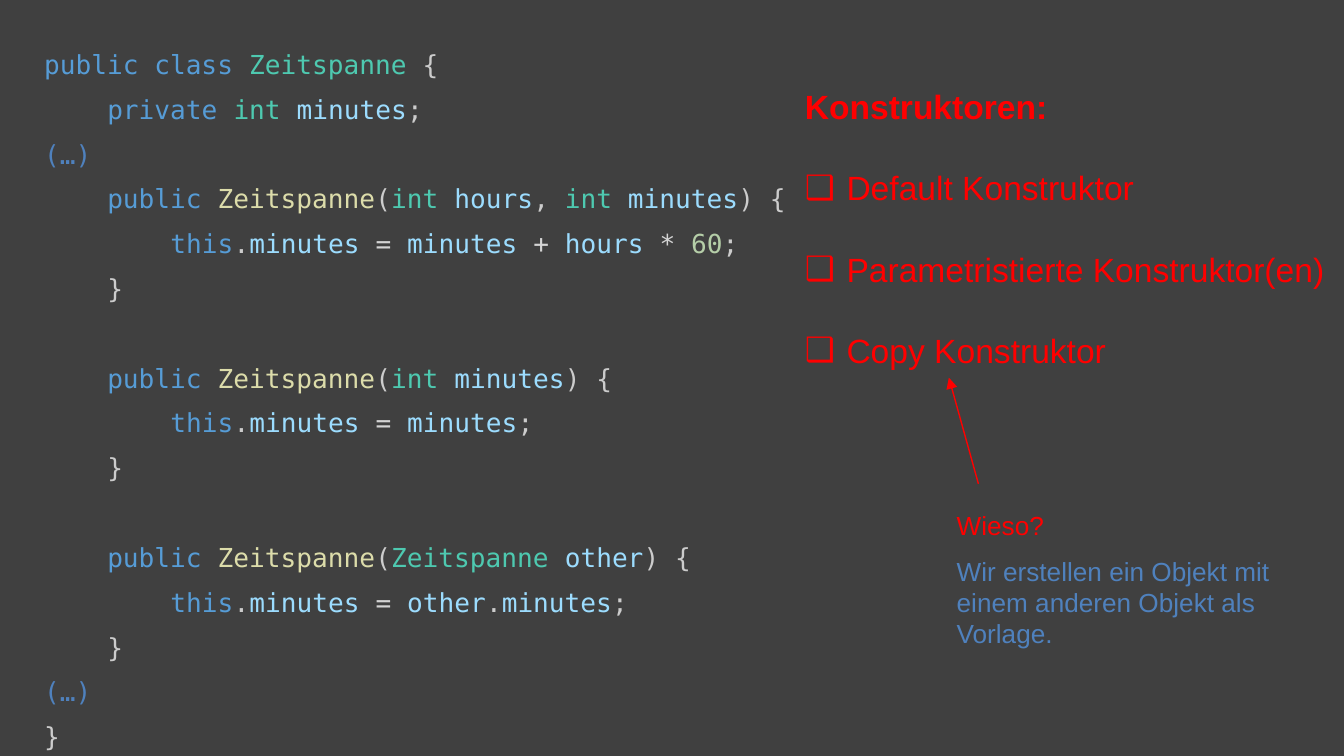
"""Build the slide on constructors of a Java class."""
from dataclasses import dataclass
from functools import partial
from typing import NamedTuple

from lxml import etree
from pptx import Presentation
from pptx.dml.color import RGBColor
from pptx.enum.shapes import MSO_CONNECTOR, MSO_SHAPE
from pptx.oxml.ns import qn
from pptx.util import Inches, Pt

RECT = MSO_SHAPE.RECTANGLE
STRAIGHT = MSO_CONNECTOR.STRAIGHT


@dataclass(frozen=True)
class Theme:
    """Hold the colours, fonts and type sizes."""
    back: str = "404040"
    red: str = "FF0000"
    blue: str = "4F81BD"
    word: str = "569CD6"
    kind: str = "4EC9B0"
    name: str = "9CDCFE"
    call: str = "DCDCAA"
    mark: str = "CCCCCC"
    sign: str = "D4D4D4"
    digit: str = "B5CEA8"
    sans: str = "Arial"
    mono: str = "DejaVu Sans Mono"
    body: int = 14
    head: int = 18
    pitch: int = 24
    gap: int = 22
    step: float = 0.47
    hang: float = 0.31


class Run(NamedTuple):
    """Pair a piece of text with its colour."""
    text: str
    ink: str


class Line(NamedTuple):
    """Describe one line of text and how it is set."""
    runs: list[Run]
    depth: int = 0
    gap: int = 0
    bold: bool = False
    bullet: str = ""


class Box(NamedTuple):
    """Place a text box, in inches."""
    left: float
    top: float
    width: float
    height: float


T = Theme()
word, kind, name, call, mark, sign, digit, red, blue = (
    partial(Run, ink=ink) for ink in
    (T.word, T.kind, T.name, T.call, T.mark, T.sign, T.digit, T.red, T.blue))


def method(args: list[Run], value: list[Run], gap: int = 0) -> list[Line]:
    """Return the lines of one constructor."""
    return [
        Line([word("public "), call("Zeitspanne"), mark("("), *args, mark(") {")], 1, gap),
        Line([word("this"), mark("."), name("minutes "), sign("= "), *value, mark(";")], 2),
        Line([mark("}")], 1),
    ]


CODE = [
    Line([word("public class "), kind("Zeitspanne"), mark(" {")]),
    Line([word("private "), kind("int "), name("minutes"), mark(";")], 1),
    Line([blue("(…)")]),
    *method([kind("int "), name("hours"), mark(", "), kind("int "), name("minutes")],
            [name("minutes "), sign("+ "), name("hours "), sign("* "), digit("60")]),
    *method([kind("int "), name("minutes")], [name("minutes")], T.pitch),
    *method([kind("Zeitspanne "), name("other")],
            [name("other"), mark("."), name("minutes")], T.pitch),
    Line([blue("(…)")]),
    Line([mark("}")]),
]
TYPES = ["Default Konstruktor", "Parametristierte Konstruktor(en)", "Copy Konstruktor"]
LIST = [Line([red("Konstruktoren:")], bold=True),
        *(Line([red(text)], gap=T.gap, bullet="❑") for text in TYPES)]
NOTE = ["Wir erstellen ein Objekt mit", "einem anderen Objekt als", "Vorlage."]


def indent(para, line: Line) -> None:
    """Indent a paragraph and give it a bullet if it has one."""
    props = para._p.get_or_add_pPr()
    if line.bullet:
        props.set("marL", str(Inches(T.hang)))
        props.set("indent", str(-Inches(T.hang)))
        ink = etree.SubElement(props, qn("a:buClr"))
        etree.SubElement(ink, qn("a:srgbClr"), val=T.red)
        etree.SubElement(props, qn("a:buFont"), typeface=T.sans)
        etree.SubElement(props, qn("a:buChar"), char=line.bullet)
    elif line.depth:
        props.set("marL", str(Inches(T.step * line.depth)))


def write(slide, box: Box, lines: list[Line], font: str, size: int, pitch: int = 0) -> None:
    """Add a text box and fill it line by line."""
    frame = slide.shapes.add_textbox(*map(Inches, box)).text_frame
    frame.word_wrap = True
    for row, line in enumerate(lines):
        para = frame.add_paragraph() if row else frame.paragraphs[0]
        para.space_before = Pt(line.gap)
        if pitch:
            para.line_spacing = Pt(pitch)
        indent(para, line)
        for part in line.runs:
            run = para.add_run()
            run.text = part.text
            run.font.name = font
            run.font.size = Pt(size)
            run.font.bold = line.bold
            run.font.color.rgb = RGBColor.from_string(part.ink)


def cover(slide, width: int, height: int) -> None:
    """Lay the dark panel over the whole slide."""
    panel = slide.shapes.add_shape(RECT, 0, 0, width, height)
    panel.shadow.inherit = False
    panel.fill.solid()
    panel.fill.fore_color.rgb = RGBColor.from_string(T.back)
    panel.line.color.rgb = RGBColor.from_string(T.back)
    panel.line.width = Pt(2)


def arrow(slide, start: tuple[float, float], end: tuple[float, float]) -> None:
    """Draw a thin red arrow."""
    link = slide.shapes.add_connector(STRAIGHT, *map(Inches, start + end))
    link.line.color.rgb = RGBColor.from_string(T.red)
    link.line.width = Pt(0.75)
    etree.SubElement(link._element.spPr.find(qn("a:ln")), qn("a:tailEnd"), type="triangle")
    etree.SubElement(link._element.spPr, qn("a:effectLst"))


def main() -> None:
    """Build and save the slide."""
    deck = Presentation()
    deck.slide_width = Inches(10)
    deck.slide_height = Inches(10 * 9 / 16)
    slide = deck.slides.add_slide(deck.slide_layouts[6])
    cover(slide, deck.slide_width, deck.slide_height)
    write(slide, Box(0.23, 0.21, 9.54, 5.79), CODE, T.mono, T.body, T.pitch)
    write(slide, Box(5.89, 0.59, 4.11, 2.22), LIST, T.sans, T.head)
    arrow(slide, (7.28, 3.6), (7.06, 2.81))
    write(slide, Box(7.02, 3.74, 0.9, 0.34), [Line([red("Wieso?")])], T.sans, T.body)
    write(slide, Box(7.02, 4.08, 2.97, 0.81),
          [Line([blue(text)]) for text in NOTE], T.sans, T.body)
    deck.save("out.pptx")


if __name__ == "__main__":
    main()
